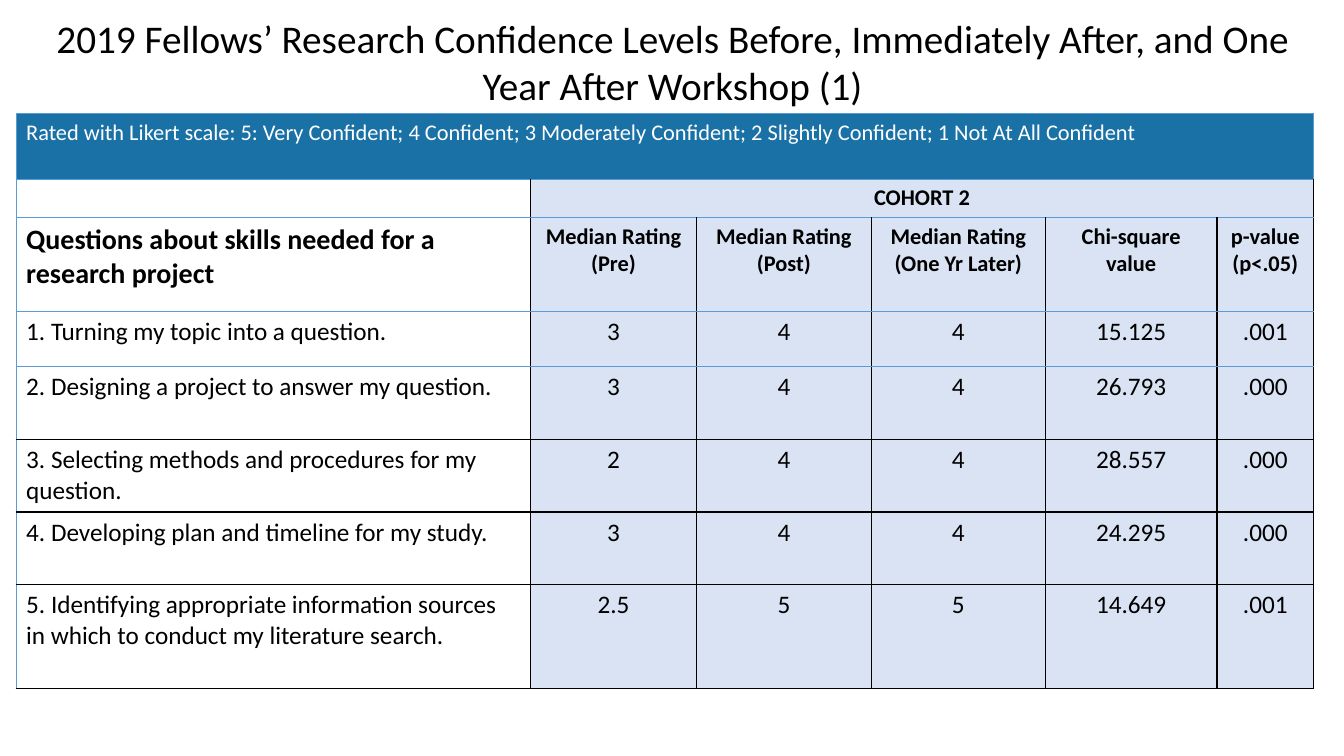
from dataclasses import dataclass

from lxml import etree
from pptx import Presentation
from pptx.dml.color import RGBColor
from pptx.enum import text
from pptx.oxml import ns
from pptx.util import Inches, Pt


@dataclass(frozen=True)
class Theme:
    font: str = "Calibri"
    black: str = "000000"
    white: str = "FFFFFF"
    banner: str = "1A71A6"
    tint: str = "DAE3F3"
    rule: str = "5B9BD5"
    title_size: int = 28
    question_head_size: int = 20
    body_size: int = 18
    head_size: int = 16


@dataclass(frozen=True)
class Skill:
    question: str
    pre: str
    post: str
    year_later: str
    chi_square: str
    p_value: str

    def values(self) -> list[str]:
        return [self.question, self.pre, self.post, self.year_later,
                self.chi_square, self.p_value]


@dataclass(frozen=True)
class CellStyle:
    size: int
    bold: bool = False
    color: str = Theme.black
    fill: str | None = None
    centered: bool = False


THEME = Theme()
COLUMN_WIDTHS = [5.1, 1.65, 1.73, 1.73, 1.7, 0.96]
ROW_HEIGHTS = [0.65, 0.38, 0.93, 0.55, 0.72, 0.72, 0.72, 1.03]
LAST_BLUE_RULE = 3  # rows down to this one are closed by a blue line

TITLE = ("2019 Fellows’ Research Confidence Levels Before, Immediately After, "
         "and One Year After Workshop (1)")
SCALE = ("Rated with Likert scale: 5: Very Confident; 4 Confident; "
         "3 Moderately Confident; 2 Slightly Confident; 1 Not At All Confident")
HEADINGS = ["Questions about skills needed for a research project",
            "Median Rating\n(Pre)", "Median Rating\n(Post)",
            "Median Rating\n(One Yr Later)", "Chi-square value",
            "p-value (p<.05)"]
SKILLS = [
    Skill("1. Turning my topic into a question.", "3", "4", "4", "15.125", ".001"),
    Skill("2. Designing a project to answer my question.",
          "3", "4", "4", "26.793", ".000"),
    Skill("3. Selecting methods and procedures for my question.",
          "2", "4", "4", "28.557", ".000"),
    Skill("4. Developing plan and timeline for my study.",
          "3", "4", "4", "24.295", ".000"),
    Skill("5. Identifying appropriate information sources in which to conduct "
          "my literature search.", "2.5", "5", "5", "14.649", ".001"),
]


def format_text(frame, style: CellStyle) -> None:
    for paragraph in frame.paragraphs:
        paragraph.alignment = (text.PP_ALIGN.CENTER if style.centered
                               else text.PP_ALIGN.LEFT)
        paragraph.font.name = THEME.font
        paragraph.font.size = Pt(style.size)
        paragraph.font.bold = style.bold
        paragraph.font.color.rgb = RGBColor.from_string(style.color)


def write_cell(cell, words: str, style: CellStyle) -> None:
    cell.text = words
    format_text(cell.text_frame, style)
    if style.fill:
        cell.fill.solid()
        cell.fill.fore_color.rgb = RGBColor.from_string(style.fill)
    else:
        cell.fill.background()


def draw_borders(cell, row: int, column: int) -> None:
    banner = row == 0
    colors = {
        "lnL": THEME.rule if banner or column == 0 else THEME.black,
        "lnR": THEME.rule if banner else THEME.black,
        "lnT": THEME.rule if row <= LAST_BLUE_RULE + 1 else THEME.black,
        "lnB": THEME.rule if row <= LAST_BLUE_RULE else THEME.black,
    }
    properties = cell._tc.get_or_add_tcPr()
    for position, (side, color) in enumerate(colors.items()):
        line = etree.Element(ns.qn(f"a:{side}"), w=str(Pt(1)))
        fill = etree.SubElement(line, ns.qn("a:solidFill"))
        etree.SubElement(fill, ns.qn("a:srgbClr"), val=color)
        properties.insert(position, line)


def add_title(slide) -> None:
    title = slide.shapes.title
    title.left, title.top = Inches(0.32), Inches(0.09)
    title.width, title.height = Inches(12.7), Inches(1.04)
    frame = title.text_frame
    frame.text = TITLE
    frame.word_wrap = True
    frame.auto_size = text.MSO_AUTO_SIZE.SHAPE_TO_FIT_TEXT
    format_text(frame, CellStyle(THEME.title_size, centered=True))


def add_ratings(slide) -> None:
    ratings = slide.shapes.add_table(
        len(ROW_HEIGHTS), len(COLUMN_WIDTHS), Inches(0.16), Inches(1.13),
        Inches(sum(COLUMN_WIDTHS)), Inches(sum(ROW_HEIGHTS))).table
    ratings.first_row = ratings.horz_banding = False
    for column, width in zip(ratings.columns, COLUMN_WIDTHS):
        column.width = Inches(width)
    for row, height in zip(ratings.rows, ROW_HEIGHTS):
        row.height = Inches(height)

    # Scale banner and cohort heading
    last = len(COLUMN_WIDTHS) - 1
    ratings.cell(0, 0).merge(ratings.cell(0, last))
    ratings.cell(1, 1).merge(ratings.cell(1, last))
    heading = CellStyle(THEME.head_size, bold=True, fill=THEME.tint, centered=True)
    write_cell(ratings.cell(0, 0), SCALE,
               CellStyle(THEME.head_size, color=THEME.white, fill=THEME.banner))
    write_cell(ratings.cell(1, 0), "", CellStyle(THEME.head_size))
    write_cell(ratings.cell(1, 1), "COHORT 2", heading)

    # Column headings
    question_heading = CellStyle(THEME.question_head_size, bold=True)
    for column, words in enumerate(HEADINGS):
        write_cell(ratings.cell(2, column), words,
                   heading if column else question_heading)

    # One row for each skill
    question = CellStyle(THEME.body_size)
    value = CellStyle(THEME.body_size, fill=THEME.tint, centered=True)
    for row, skill in enumerate(SKILLS, start=3):
        for column, words in enumerate(skill.values()):
            write_cell(ratings.cell(row, column), words,
                       value if column else question)

    # Cell borders
    for row in range(len(ROW_HEIGHTS)):
        for column in range(len(COLUMN_WIDTHS)):
            draw_borders(ratings.cell(row, column), row, column)


def main() -> None:
    deck = Presentation()
    deck.slide_width, deck.slide_height = Inches(13.33), Inches(7.5)
    slide = deck.slides.add_slide(deck.slide_layouts[5])
    add_ratings(slide)
    add_title(slide)
    deck.save("out.pptx")


if __name__ == "__main__":
    main()
